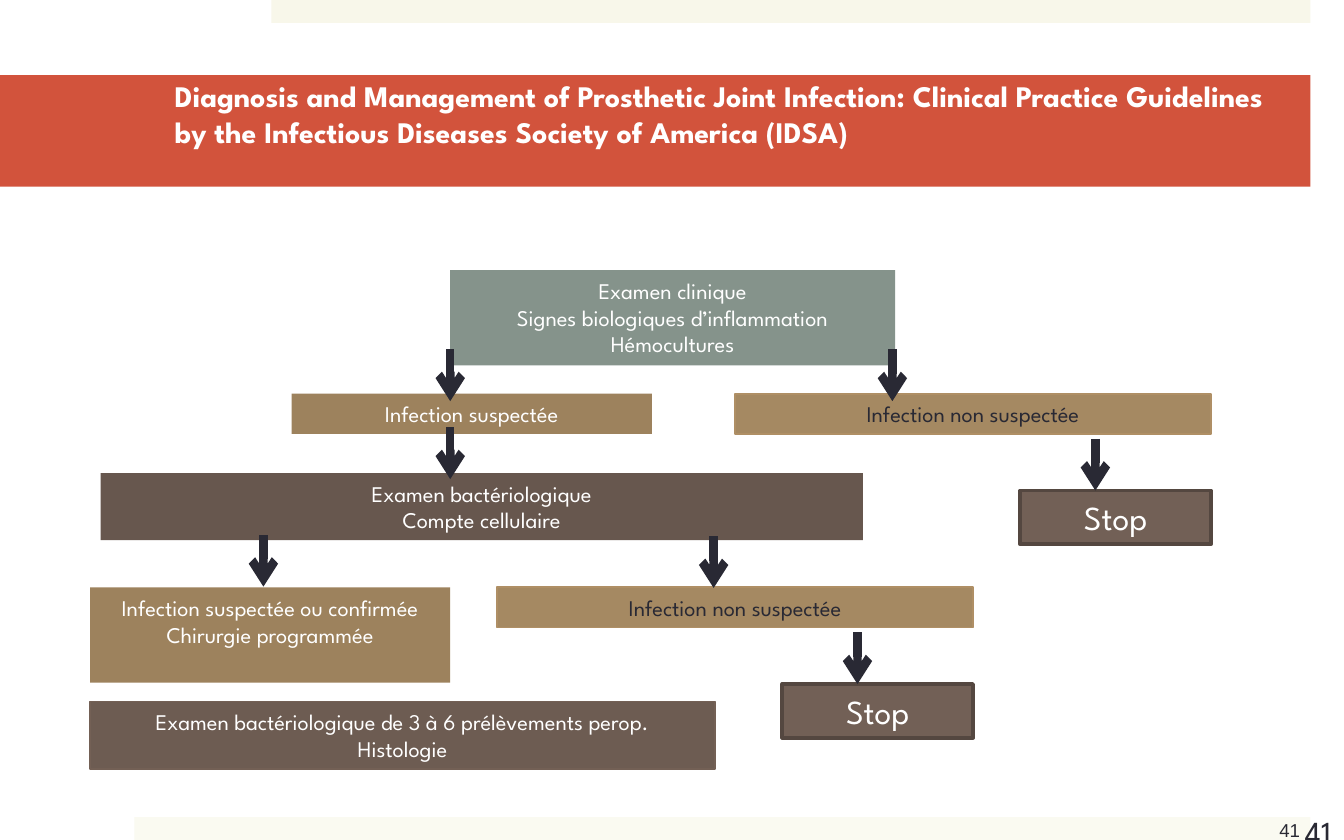
import dataclasses

import pptx
import pptx.dml.color
import pptx.enum.shapes
import pptx.enum.text
import pptx.oxml
import pptx.oxml.ns
import pptx.util

Inches = pptx.util.Inches
Pt = pptx.util.Pt
RECTANGLE = pptx.enum.shapes.MSO_SHAPE.RECTANGLE
ALIGN = pptx.enum.text.PP_ALIGN
ANCHOR = pptx.enum.text.MSO_ANCHOR


@dataclasses.dataclass(frozen=True)
class Theme:
    font: str = "League Spartan"
    number_font: str = "Arial"
    title_size: int = 16
    body_size: int = 12
    stop_size: int = 18
    number_size: int = 10
    white: str = "FFFFFF"
    ink: str = "292934"
    title_fill: str = "D2533C"
    top_band: str = "F8F7EA"
    bottom_band: str = "FAFAF1"


THEME = Theme()

# Each box style: fill, line colour, line width, text colour, text size
STYLES = {
    "start": ("85938B", None, 0, THEME.white, THEME.body_size),
    "suspected": ("9D825D", None, 0, THEME.white, THEME.body_size),
    "cleared": ("A58962", "AF8F65", 1, THEME.ink, THEME.body_size),
    "exam": ("67574E", None, 0, THEME.white, THEME.body_size),
    "samples": ("6D5C52", "736055", 1, THEME.white, THEME.body_size),
    "stop": ("726056", "544740", 2, THEME.white, THEME.stop_size),
}
ARROW_LENGTH = 0.385


def rgb(value):
    return pptx.dml.color.RGBColor.from_string(value)


def inches(box):
    return [Inches(value) for value in box]


def set_attrs(obj, values):
    for name, value in values.items():
        setattr(obj, name, value)


def write(tf, lines, color, size, align=ALIGN.LEFT, font=THEME.font, bold=False):
    for i, line in enumerate(lines):
        p = tf.paragraphs[0] if i == 0 else tf.add_paragraph()
        p.alignment = align
        r = p.add_run()
        r.text = line
        set_attrs(r.font, {"name": font, "size": Pt(size), "bold": bold})
        r.font.color.rgb = rgb(color)


def add_rect(slide, box, fill, line=None, width=0):
    sp = slide.shapes.add_shape(RECTANGLE, *inches(box))
    sp.shadow.inherit = False
    sp.fill.solid()
    sp.fill.fore_color.rgb = rgb(fill)
    if line:
        sp.line.color.rgb = rgb(line)
        sp.line.width = Pt(width)
    else:
        sp.line.fill.background()
    return sp


def add_box(slide, style, box, *lines):
    fill, line, width, color, size = STYLES[style]
    tf = add_rect(slide, box, fill, line, width).text_frame
    set_attrs(tf, {"word_wrap": True, "vertical_anchor": ANCHOR.TOP})
    write(tf, lines, color, size, ALIGN.CENTER)


def add_down_arrow(slide, x, y):
    line = slide.shapes.add_connector(
        pptx.enum.shapes.MSO_CONNECTOR.STRAIGHT,
        *inches((x, y, x, y + ARROW_LENGTH)))
    line.line.color.rgb = rgb(THEME.ink)
    line.line.width = Pt(4.5)
    ns = pptx.oxml.ns.nsdecls("a")
    line.line._get_or_add_ln().append(
        pptx.oxml.parse_xml(f'<a:tailEnd {ns} type="arrow"/>'))
    line._element.spPr.append(pptx.oxml.parse_xml(f"<a:effectLst {ns}/>"))


def add_title(slide, box, text):
    sp = slide.shapes.title
    left, top, width, height = inches(box)
    set_attrs(sp, {"left": left, "top": top, "width": width, "height": height})
    sp.fill.solid()
    sp.fill.fore_color.rgb = rgb(THEME.title_fill)
    set_attrs(sp.text_frame, {
        "word_wrap": True,
        "auto_size": pptx.enum.text.MSO_AUTO_SIZE.NONE,
        "vertical_anchor": ANCHOR.TOP,
        "margin_left": Inches(1.3),
        "margin_right": Inches(0.3),
        "margin_top": Inches(0.02),
        "margin_bottom": Inches(0.05),
    })
    write(sp.text_frame, [text], THEME.white, THEME.title_size, bold=True)


def add_page_number(slide, box, size, font):
    tf = slide.shapes.add_textbox(*inches(box)).text_frame
    tf.word_wrap = True
    write(tf, ["41"], THEME.ink, size, font=font)


def add_cleared_branch(slide, left, top):
    """Place "not suspected", its arrow and the stop box below it."""
    width, stop_width = 3.54, 1.42
    add_box(slide, "cleared", (left, top, width, 0.3), "Infection non suspectée")
    add_box(slide, "stop",
            (left + width - stop_width, top + 0.72, stop_width, 0.4), "Stop")
    add_down_arrow(slide, left + 2.68, top + 0.335)


def add_flowchart(slide, left, top):
    """Place the decision tree with its upper left corner at left, top."""
    def at(x, y, width, height):
        return left + x, top + y, width, height

    add_box(slide, "start", at(2.68, 0, 3.31, 0.71), "Examen clinique",
            "Signes biologiques d’inflammation", "Hémocultures")
    add_box(slide, "suspected", at(1.5, 0.92, 2.68, 0.3), "Infection suspectée")
    add_box(slide, "exam", at(0.08, 1.51, 5.67, 0.5),
            "Examen bactériologique", "Compte cellulaire")
    add_box(slide, "suspected", at(0, 2.36, 2.68, 0.71),
            "Infection suspectée ou confirmée", "Chirurgie programmée")
    add_box(slide, "samples", at(0, 3.21, 4.65, 0.5),
            "Examen bactériologique de 3 à 6 prélèvements perop.", "Histologie")
    for x, y in ((4.8, 0.92), (3.03, 2.36)):
        add_cleared_branch(slide, left + x, top + y)
    for x, y in ((2.68, 0.59), (5.97, 0.59), (2.68, 1.17),
                 (1.29, 1.97), (4.64, 1.98)):
        add_down_arrow(slide, left + x, top + y)


def main():
    prs = pptx.Presentation()
    set_attrs(prs, {"slide_width": Inches(10), "slide_height": Inches(6.25)})
    slide = prs.slides.add_slide(prs.slide_layouts.get_by_name("Title Only"))
    add_rect(slide, (2.02, 0, 7.73, 0.17), THEME.top_band)
    add_rect(slide, (1, 6.08, 8.75, 0.17), THEME.bottom_band)
    add_page_number(slide, (9.42, 6.04, 0.41, 0.28),
                    THEME.number_size, THEME.number_font)
    add_page_number(slide, (9.61, 5.99, 0.5, 0.33), THEME.stop_size, THEME.font)
    add_title(slide, (0, 0.56, 9.75, 0.83),
              "Diagnosis and Management of Prosthetic Joint Infection: "
              "Clinical Practice Guidelines by the Infectious Diseases "
              "Society of America (IDSA)")
    add_flowchart(slide, 0.67, 2.01)
    prs.save("out.pptx")


if __name__ == "__main__":
    main()
